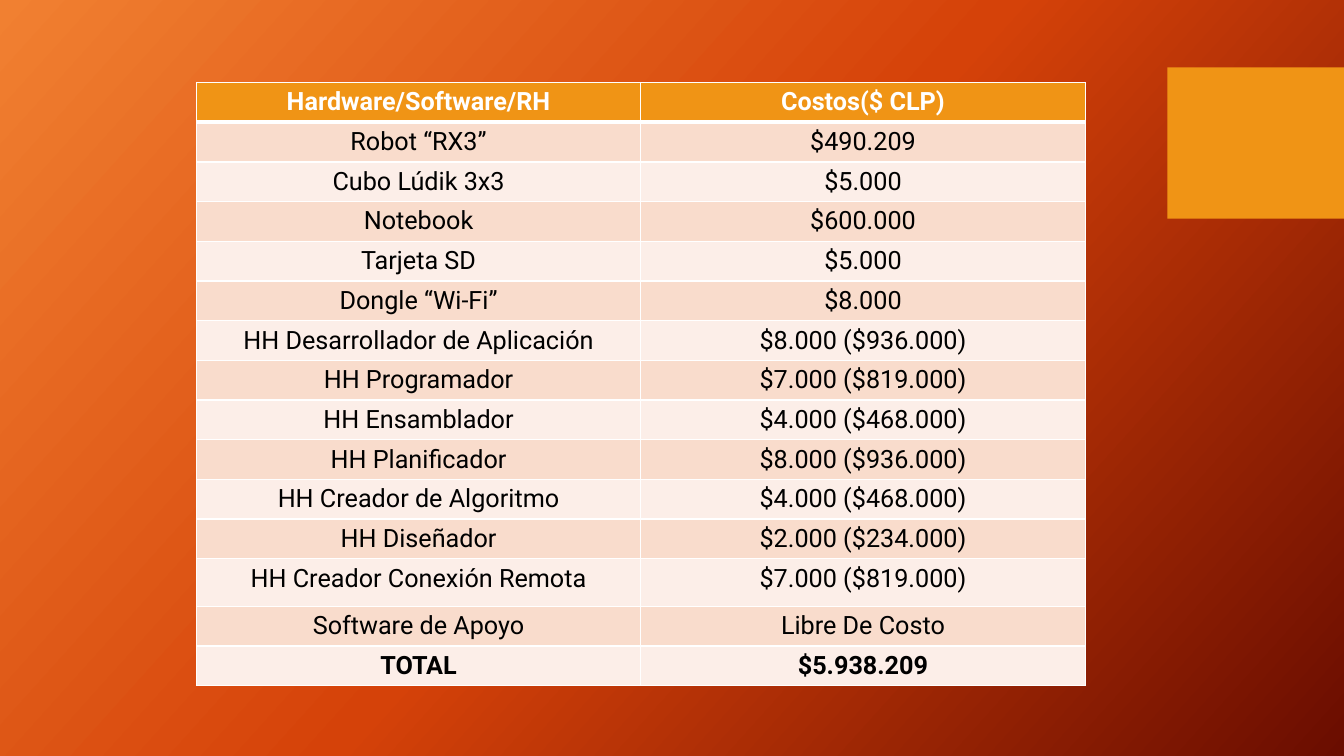
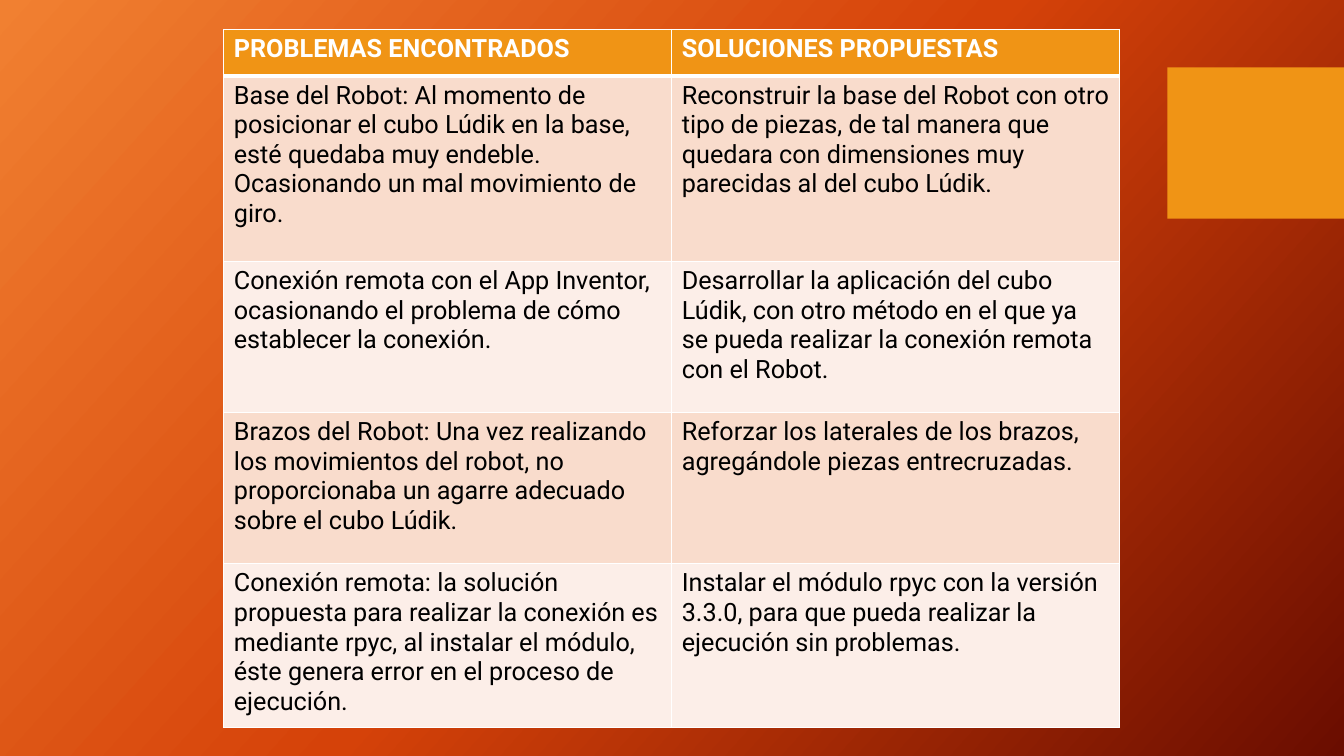
"""Build two slides: a cost table, and a table of problems with their solutions."""
import copy
import dataclasses

import pptx
import pptx.dml.color
import pptx.enum.shapes
import pptx.enum.text
import pptx.oxml
import pptx.oxml.ns
import pptx.util

Cm = pptx.util.Cm
ALIGN = pptx.enum.text.PP_ALIGN


@dataclasses.dataclass(frozen=True)
class Theme:
    """Colours, type and line widths that the slides share."""
    accent: str = "F09415"
    light: str = "FFFFFF"
    dark: str = "000000"
    bands: tuple = ("F9DCCC", "FCEEE8")
    stops: tuple = ((0, "F18031"), (0.5, "D54209"), (1, "6A0D00"))
    slope: int = 42
    font: str = "Roboto"
    size: int = 18
    thin: int = 1
    thick: int = 3


THEME = Theme()

COSTS = [
    ("Hardware/Software/RH", "Costos($ CLP)"),
    ("Robot “RX3”", "$490.209"),
    ("Cubo Lúdik 3x3", "$5.000"),
    ("Notebook", "$600.000"),
    ("Tarjeta SD", "$5.000"),
    ("Dongle “Wi-Fi”", "$8.000"),
    ("HH Desarrollador de Aplicación", "$8.000 ($936.000)"),
    ("HH Programador", "$7.000 ($819.000)"),
    ("HH Ensamblador", "$4.000 ($468.000)"),
    ("HH Planificador", "$8.000 ($936.000)"),
    ("HH Creador de Algoritmo", "$4.000 ($468.000)"),
    ("HH Diseñador", "$2.000 ($234.000)"),
    ("HH Creador Conexión Remota", "$7.000 ($819.000)"),
    ("Software de Apoyo", "Libre De Costo"),
    ("TOTAL", "$5.938.209"),
]

ISSUES = [
    ("PROBLEMAS ENCONTRADOS", "SOLUCIONES PROPUESTAS"),
    ("Base del Robot: Al momento de posicionar el cubo Lúdik en la base, "
     "esté quedaba muy endeble. Ocasionando un mal movimiento de giro.",
     "Reconstruir la base del Robot con otro tipo de piezas, de tal manera que "
     "quedara con dimensiones muy parecidas al del cubo Lúdik."),
    ("Conexión remota con el App Inventor, ocasionando el problema de cómo "
     "establecer la conexión.",
     "Desarrollar la aplicación del cubo Lúdik, con otro método en el que ya "
     "se pueda realizar la conexión remota con el Robot."),
    ("Brazos del Robot: Una vez realizando los movimientos del robot, no "
     "proporcionaba un agarre adecuado sobre el cubo Lúdik.",
     "Reforzar los laterales de los brazos, agregándole piezas entrecruzadas."),
    ("Conexión remota: la solución propuesta para realizar la conexión es "
     "mediante rpyc, al instalar el módulo, éste genera error en el proceso "
     "de ejecución.",
     "Instalar el módulo rpyc con la versión 3.3.0, para que pueda realizar "
     "la ejecución sin problemas."),
]


def tint(code):
    """Turn a hex code into a colour."""
    return pptx.dml.color.RGBColor.from_string(code)


def paint(item, code):
    """Give a shape or cell a solid fill."""
    item.fill.solid()
    item.fill.fore_color.rgb = tint(code)


def set_ground(master):
    """Lay the shared gradient on the master."""
    fill = master.background.fill
    fill.gradient()
    fill.gradient_angle = 360 - THEME.slope
    stops = next(master.element.iter(pptx.oxml.ns.qn("a:gsLst")))
    stops.append(copy.deepcopy(stops[-1]))
    for stop, (place, code) in zip(fill.gradient_stops, THEME.stops):
        stop.position = place
        stop.color.rgb = tint(code)


def add_block(slide, width):
    """Draw the accent block and hand it to the slide's layout."""
    wide = Cm(4.45)
    block = slide.shapes.add_shape(
        pptx.enum.shapes.MSO_SHAPE.RECTANGLE, width - wide, Cm(1.7), wide, Cm(3.81))
    block.shadow.inherit = False
    paint(block, THEME.accent)
    block.line.fill.background()
    slide.slide_layout.shapes.element.append(block.element)


def rule_cell(cell, top, base):
    """Draw the four borders of a cell."""
    props = cell._tc.get_or_add_tcPr()
    sides = {"L": THEME.thin, "R": THEME.thin, "T": top, "B": base}
    for side, points in sides.items():
        props.append(pptx.oxml.parse_xml(
            f'<a:ln{side} {pptx.oxml.ns.nsdecls("a")} w="{pptx.util.Pt(points)}">'
            f'<a:solidFill><a:srgbClr val="{THEME.light}"/></a:solidFill>'
            f'</a:ln{side}>'))


def write_cell(cell, text, align, bold, code):
    """Write and format the text of a cell."""
    cell.text = text
    line = cell.text_frame.paragraphs[0]
    line.alignment = align
    font = line.runs[0].font
    looks = {"name": THEME.font, "size": pptx.util.Pt(THEME.size), "bold": bold}
    for name, value in looks.items():
        setattr(font, name, value)
    font.color.rgb = tint(code)


def add_grid(slide, rows, left, top, wide, highs, align, total=False):
    """Add a banded table with a header and, if asked, a bold last row."""
    count = len(rows[0])
    grid = slide.shapes.add_table(
        len(rows), count, Cm(left), Cm(top), Cm(wide * count), Cm(sum(highs))).table
    for column in grid.columns:
        column.width = Cm(wide)
    for i, (row, high) in enumerate(zip(rows, highs)):
        grid.rows[i].height = Cm(high)
        head = i == 0
        bold = head or (total and i == len(rows) - 1)
        fill = THEME.accent if head else THEME.bands[(i - 1) % 2]
        ink = THEME.light if head else THEME.dark
        above = THEME.thick if i == 1 else THEME.thin
        below = THEME.thick if head else THEME.thin
        for j, text in enumerate(row):
            cell = grid.cell(i, j)
            rule_cell(cell, above, below)
            paint(cell, fill)
            write_cell(cell, text, align, bold, ink)


def main():
    """Build and save the deck."""
    deck = pptx.Presentation()
    deck.slide_width, deck.slide_height = Cm(33.87), Cm(19.05)
    set_ground(deck.slide_master)
    blank = deck.slide_layouts.get_by_name("Blank")
    costs, issues = (deck.slides.add_slide(blank) for _ in range(2))
    add_block(costs, deck.slide_width)
    add_grid(costs, COSTS, 4.95, 2.08, 11.2, [1] * 12 + [1.2, 1, 1],
             ALIGN.CENTER, total=True)
    add_grid(issues, ISSUES, 5.64, 0.74, 11.29, [1.17, 4.67, 3.81, 3.81, 4.14],
             ALIGN.LEFT)
    deck.save("out.pptx")


if __name__ == "__main__":
    main()
